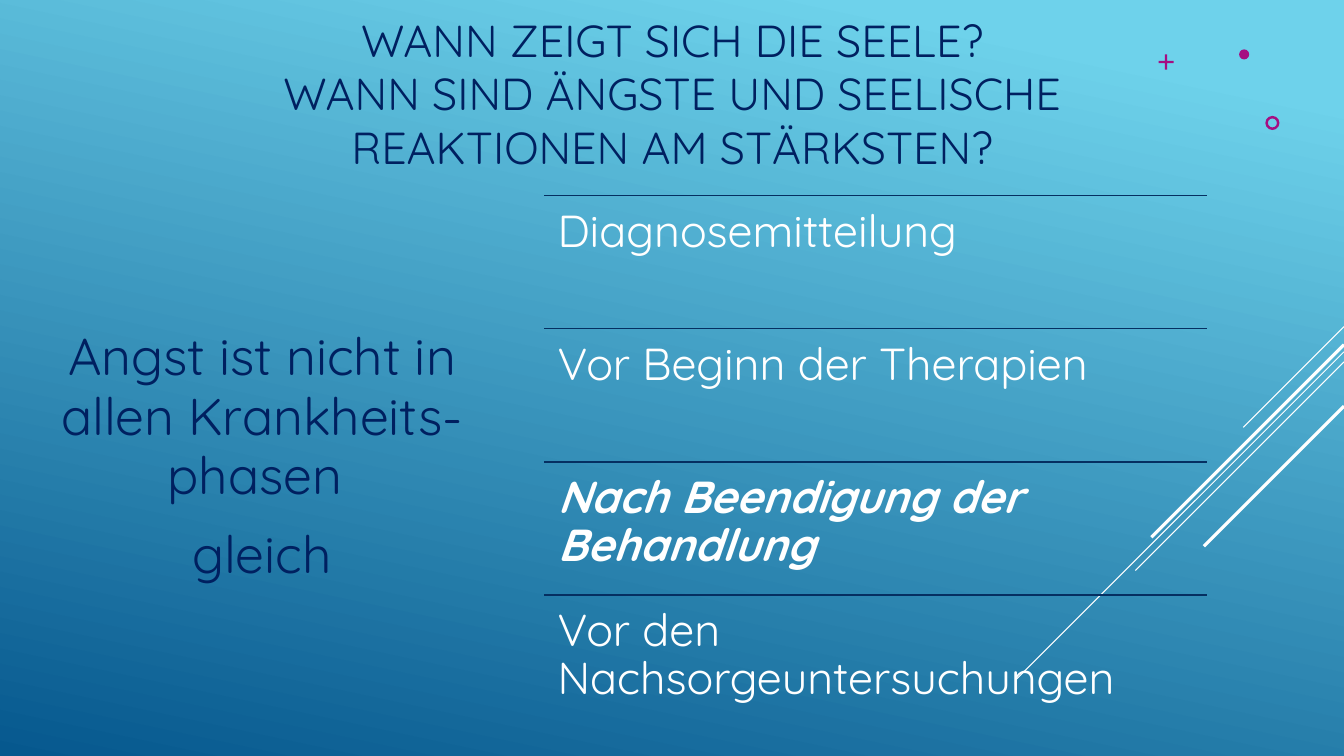
import pptx
import pptx.util
import pptx.dml.color
import pptx.enum.shapes
import pptx.enum.text
import pptx.oxml

Inches = pptx.util.Inches
Pt = pptx.util.Pt
SHAPE = pptx.enum.shapes.MSO_SHAPE
ALIGN = pptx.enum.text.PP_ALIGN
ANCHOR = pptx.enum.text.MSO_ANCHOR

FONT = "Quicksand"
COLORS = {
    "sky": "6ED2EB",
    "deep": "06588E",
    "navy": "002060",
    "rule": "052F61",
    "white": "FFFFFF",
    "magenta": "A50E82",
}
RAYS = [
    (3.24, 1.00, 0.75),
    (3.49, 3.26, 0.75),
    (3.59, 2.07, 0.75),
    (3.42, 1.91, 2.25),
    (4.03, 1.39, 2.25),
]
ORNAMENTS = [
    (SHAPE.CROSS, 11.49, 0.54, 0.15, 0.43),
    (SHAPE.DONUT, 12.55, 1.15, 0.14, 0.18),
    (SHAPE.OVAL, 12.29, 0.49, 0.10, None),
]
PHASES = [
    ("Diagnosemitteilung", False),
    ("Vor Beginn der Therapien", False),
    ("Nach Beendigung der Behandlung", True),
    ("Vor den Nachsorgeuntersuchungen", False),
]


def rgb(name):
    return pptx.dml.color.RGBColor.from_string(COLORS[name])


def paint_background(page):
    fill = page.background.fill
    fill.gradient()
    fill.gradient_angle = 258
    stops = [("sky", 0.1), ("deep", 1.0)]
    for stop, (color, position) in zip(fill.gradient_stops, stops):
        stop.color.rgb = rgb(color)
        stop.position = position


def add_line(page, start, end, color, width):
    line = page.shapes.add_connector(
        pptx.enum.shapes.MSO_CONNECTOR.STRAIGHT,
        *[Inches(value) for value in start + end],
    )
    line.line.color.rgb = rgb(color)
    line.line.width = Pt(width)
    pptx.oxml.xmlchemy.OxmlElement
    properties = line._element.spPr
    properties.append(pptx.oxml.xmlchemy.OxmlElement("a:effectLst"))


def add_ornament(page, kind, left, top, size, adjustment):
    shape = page.shapes.add_shape(
        kind, Inches(left), Inches(top), Inches(size), Inches(size)
    )
    shape.shadow.inherit = False
    shape.fill.solid()
    shape.fill.fore_color.rgb = rgb("magenta")
    shape.line.fill.background()
    if adjustment is not None:
        shape.adjustments[0] = adjustment


def place(box, left, top, width, height):
    box.left, box.top = Inches(left), Inches(top)
    box.width, box.height = Inches(width), Inches(height)


def write_text(box, paragraphs, *, size, color, align=ALIGN.LEFT,
               anchor=ANCHOR.TOP, spacing=1.0, before=0, after=0,
               inset=None, strong=False):
    frame = box.text_frame
    frame.word_wrap = True
    frame.auto_size = pptx.enum.text.MSO_AUTO_SIZE.NONE
    frame.vertical_anchor = anchor
    if inset is not None:
        frame.margin_left = frame.margin_right = Inches(inset)
        frame.margin_top = frame.margin_bottom = Inches(inset)
    for index, text in enumerate(paragraphs):
        para = frame.add_paragraph() if index else frame.paragraphs[0]
        para.text = text
        para.alignment = align
        para.line_spacing = spacing
        para.space_before, para.space_after = Pt(before), Pt(after)
        for span in para.runs:
            span.font.name = FONT
            span.font.size = Pt(size)
            span.font.color.rgb = rgb(color)
            span.font.bold = span.font.italic = strong


def add_title(page):
    title = page.shapes.title
    place(title, 2.17, 0.14, 9, 1.56)
    write_text(
        title,
        ["WANN ZEIGT SICH DIE SEELE?\v"
         "WANN SIND ÄNGSTE UND SEELISCHE REAKTIONEN AM STÄRKSTEN?"],
        size=32, color="navy", align=ALIGN.CENTER, anchor=ANCHOR.MIDDLE,
        spacing=Pt(38.2),
    )


def add_statement(page):
    box = page.shapes.add_textbox(0, 0, 0, 0)
    place(box, 0.35, 2.88, 4.5, 3.3)
    write_text(
        box, ["Angst ist nicht in allen Krankheits-phasen ", "gleich"],
        size=37, color="navy", align=ALIGN.CENTER, anchor=ANCHOR.MIDDLE,
        spacing=0.96, before=7.4, after=6,
    )


def add_phases(page):
    left, first_top, width, height = 5.4, 1.94, 6.57, 1.32
    for index, (phase, strong) in enumerate(PHASES):
        top = first_top + index * height
        add_line(page, (left, top), (left + width, top), "rule", 1.25)
        box = page.shapes.add_textbox(0, 0, 0, 0)
        place(box, left, top, width, height)
        write_text(box, [phase], size=32, color="white", spacing=0.9,
                   inset=0.13, strong=strong)


def main():
    deck = pptx.Presentation()
    deck.slide_width, deck.slide_height = Inches(13.33), Inches(7.5)
    page = deck.slides.add_slide(deck.slide_layouts[5])
    paint_background(page)
    for top, reach, width in RAYS:
        add_line(page, (13.33, top), (13.33 - reach, top + reach),
                 "white", width)
    for ornament in ORNAMENTS:
        add_ornament(page, *ornament)
    add_title(page)
    add_statement(page)
    add_phases(page)
    deck.save("out.pptx")


if __name__ == "__main__":
    main()
